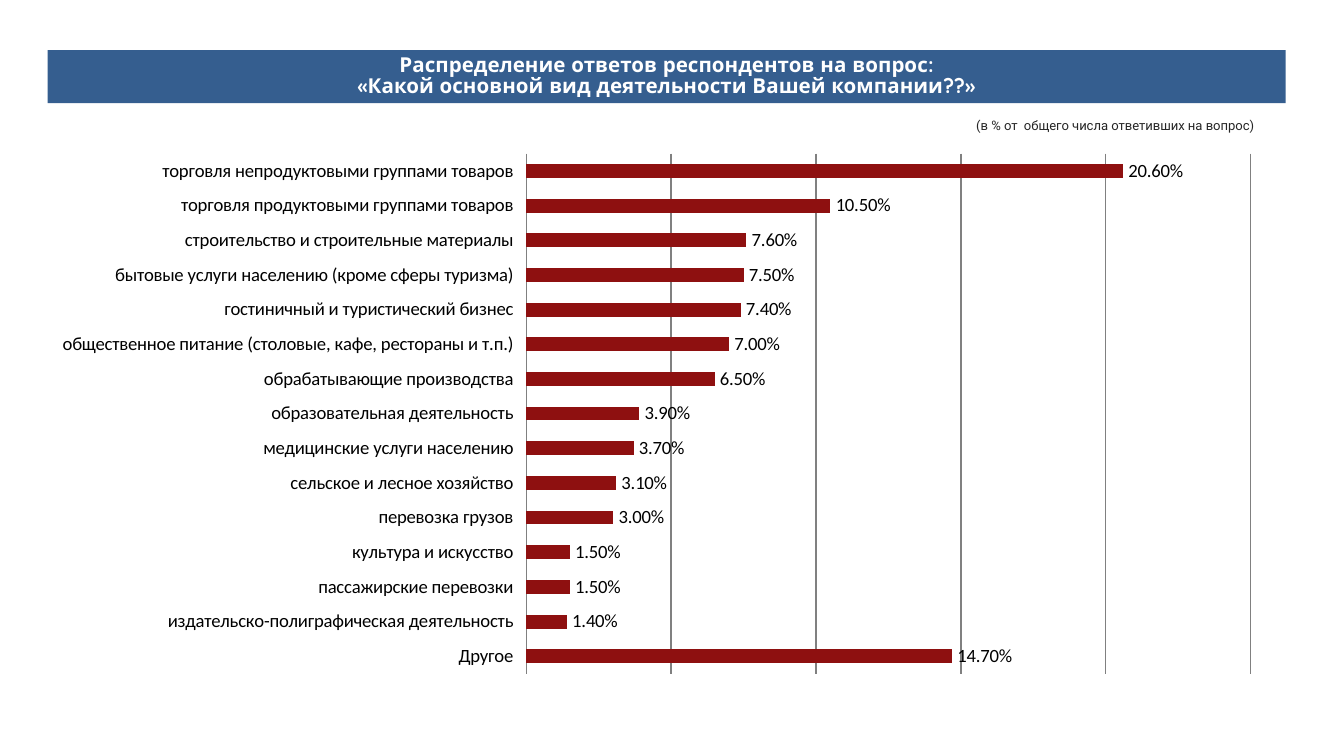
from dataclasses import dataclass

from lxml.etree import SubElement
from pptx import Presentation
from pptx.chart.data import CategoryChartData
from pptx.dml.color import RGBColor
from pptx.enum.chart import XL_CHART_TYPE, XL_LABEL_POSITION, XL_TICK_LABEL_POSITION, XL_TICK_MARK
from pptx.enum.shapes import MSO_SHAPE
from pptx.enum.text import MSO_ANCHOR, PP_ALIGN
from pptx.oxml.ns import qn
from pptx.util import Cm, Pt


@dataclass(frozen=True)
class Theme:
    banner: RGBColor = RGBColor(0x35, 0x5E, 0x8F)
    banner_text: RGBColor = RGBColor(0xFF, 0xFF, 0xFF)
    note_text: RGBColor = RGBColor(0x26, 0x26, 0x26)
    bar: RGBColor = RGBColor(0x8E, 0x10, 0x10)
    chart_text: RGBColor = RGBColor(0, 0, 0)
    grid: RGBColor = RGBColor(0x80, 0x80, 0x80)
    title_font: str = "Quicksand"
    note_font: str = "Roboto"
    chart_font: str = "Calibri"
    title_size: int = 11
    note_size: int = 7
    chart_size: int = 10


THEME = Theme()
PERCENT = "0.00%"
TITLE = "Распределение ответов респондентов на вопрос:\v«Какой основной вид деятельности Вашей компании??»"
NOTE = "(в % от  общего числа ответивших на вопрос)"
ANSWERS = {
    "Другое": 0.147,
    "издательско-полиграфическая деятельность": 0.014,
    "пассажирские перевозки": 0.015,
    "культура и искусство": 0.015,
    "перевозка грузов": 0.03,
    "сельское и лесное хозяйство": 0.031,
    "медицинские услуги населению": 0.037,
    "образовательная деятельность": 0.039,
    "обрабатывающие производства": 0.065,
    "общественное питание (столовые, кафе, рестораны и т.п.)": 0.07,
    "гостиничный и туристический бизнес": 0.074,
    "бытовые услуги населению (кроме сферы туризма)": 0.075,
    "строительство и строительные материалы": 0.076,
    "торговля продуктовыми группами товаров": 0.105,
    "торговля непродуктовыми группами товаров": 0.206,
}


def style_font(font, name, size, color, bold=False):
    font.name = name
    font.size = Pt(size)
    font.bold = bold
    font.color.rgb = color


def write_text(shape, text, *, font, size, color, bold=False, align=PP_ALIGN.LEFT, spacing=1.0):
    frame = shape.text_frame
    frame.word_wrap = True
    frame.vertical_anchor = MSO_ANCHOR.MIDDLE
    frame.margin_top = frame.margin_bottom = 0
    paragraph = frame.paragraphs[0]
    paragraph.text = text
    paragraph.alignment = align
    paragraph.line_spacing = spacing
    for run in paragraph.runs:
        style_font(run.font, font, size, color, bold)


def add_banner(slide, box):
    shape = slide.shapes.add_shape(MSO_SHAPE.RECTANGLE, *box)
    shape.shadow.inherit = False
    shape.fill.solid()
    shape.fill.fore_color.rgb = THEME.banner
    shape.line.fill.background()
    write_text(shape, TITLE, font=THEME.title_font, size=THEME.title_size, color=THEME.banner_text,
               bold=True, align=PP_ALIGN.CENTER, spacing=0.87)


def add_note(slide, box):
    shape = slide.shapes.add_textbox(*box)
    write_text(shape, NOTE, font=THEME.note_font, size=THEME.note_size, color=THEME.note_text)


def set_plot_area(chart, **fractions):
    """Fix the inner plot area as fractions (x, y, w, h) of the chart box."""
    plot_area = chart._chartSpace.chart.plotArea
    layout = plot_area.find(qn("c:layout"))
    if layout is None:
        layout = plot_area.makeelement(qn("c:layout"))
        plot_area.insert(0, layout)
    manual = SubElement(layout, qn("c:manualLayout"))
    settings = {"layoutTarget": "inner", "xMode": "edge", "yMode": "edge", **fractions}
    for name, value in settings.items():
        SubElement(manual, qn(f"c:{name}")).set("val", str(value))


def style_grid_line(line):
    line.color.rgb = THEME.grid
    line.width = Pt(0.75)


def add_answer_chart(slide, box):
    data = CategoryChartData(number_format=PERCENT)
    data.categories = list(ANSWERS)
    data.add_series("Series 1", list(ANSWERS.values()))
    chart = slide.shapes.add_chart(XL_CHART_TYPE.BAR_CLUSTERED, *box, data).chart
    chart.has_legend = False
    chart.has_title = False
    style_font(chart.font, THEME.chart_font, THEME.chart_size, THEME.chart_text)
    set_plot_area(chart, x=0.39, y=0.02, w=0.59, h=0.96)

    category_axis = chart.category_axis
    category_axis.major_tick_mark = XL_TICK_MARK.NONE
    category_axis.tick_label_position = XL_TICK_LABEL_POSITION.LOW
    style_grid_line(category_axis.format.line)

    value_axis = chart.value_axis
    value_axis.minimum_scale, value_axis.maximum_scale = 0, 0.25
    value_axis.major_unit = 0.05
    value_axis.has_major_gridlines = True
    style_grid_line(value_axis.major_gridlines.format.line)
    value_axis.visible = False

    plot = chart.plots[0]
    plot.gap_width = 150
    plot.vary_by_categories = False
    bars = plot.series[0].format
    bars.fill.solid()
    bars.fill.fore_color.rgb = THEME.bar
    plot.has_data_labels = True
    labels = plot.data_labels
    labels.show_value = True
    labels.number_format = PERCENT
    labels.number_format_is_linked = False
    labels.position = XL_LABEL_POSITION.OUTSIDE_END
    style_font(labels.font, THEME.chart_font, THEME.chart_size, THEME.chart_text)


def main():
    presentation = Presentation()
    presentation.slide_width, presentation.slide_height = Cm(25.4), Cm(14.29)
    slide = presentation.slides.add_slide(presentation.slide_layouts[6])
    left = Cm(0.9)
    add_banner(slide, (left, Cm(0.95), Cm(23.4), Cm(1)))
    add_note(slide, (Cm(18.2), Cm(2.08), Cm(6.1), Cm(0.56)))
    add_answer_chart(slide, (left, Cm(2.7), Cm(23.2), Cm(10.24)))
    presentation.save("out.pptx")


if __name__ == "__main__":
    main()
